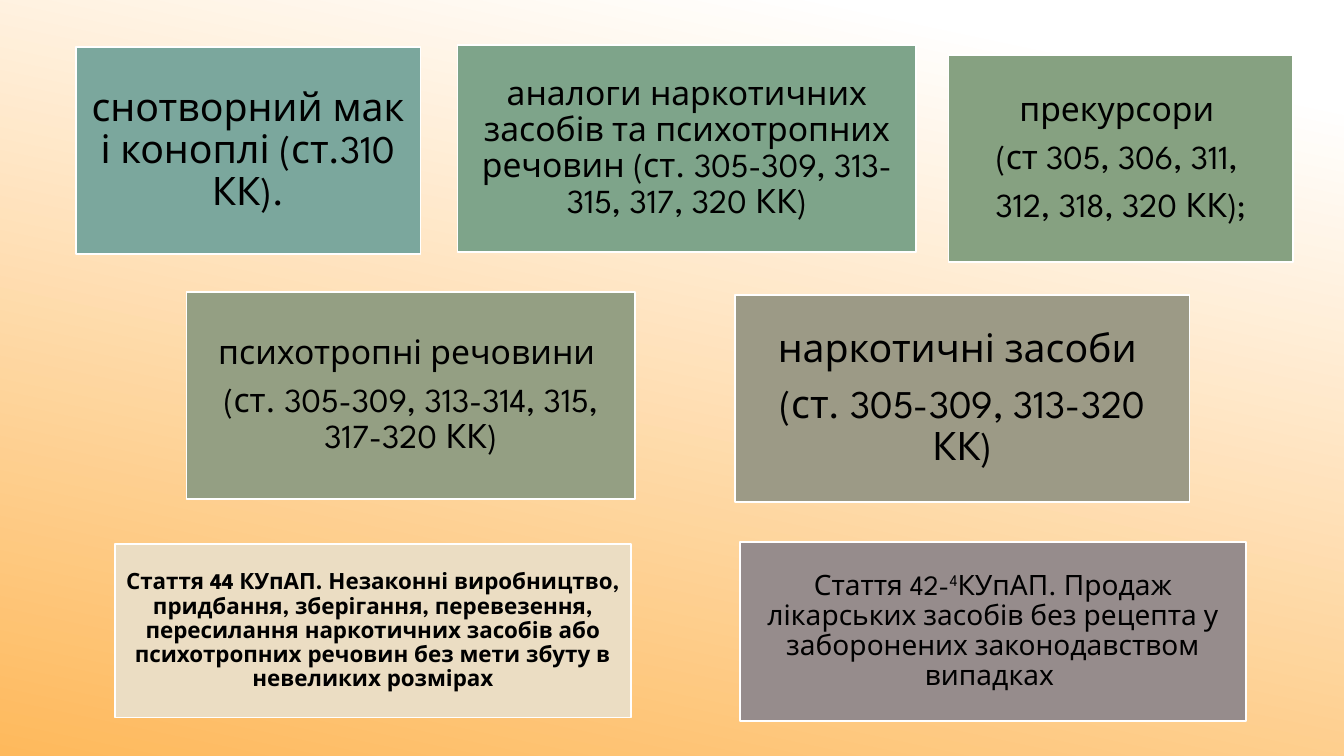
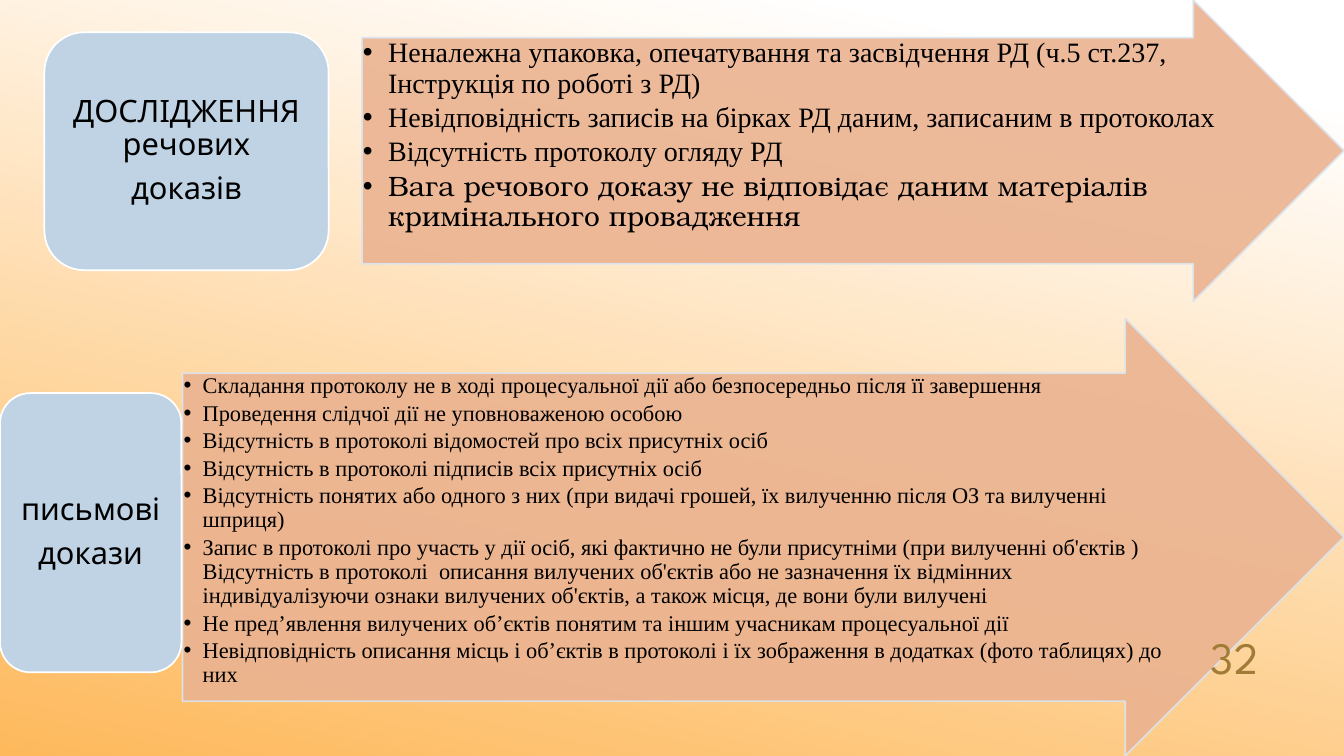
"""Builds two slides on drug offences and flaws in evidence."""
from lxml import etree
from pptx import Presentation
from pptx import util as u
from pptx.dml.color import RGBColor
from pptx.enum import shapes, text
from pptx.oxml import ns

WIDTH, HEIGHT = u.Inches(13.333), u.Inches(7.5)
COLUMN, ROW = WIDTH / 100, HEIGHT / 100

COLORS = {
    "white": "FFFFFF", "ink": "000000", "glow": "FEB95C",
    "teal": "7BA79D", "green": "7EA48A", "leaf": "86A181", "olive": "949F83",
    "khaki": "9C9A86", "sand": "EBDDC3", "mauve": "968C8C",
    "peach": "EBB391", "mist": "DCE5EE", "sky": "BFD3E4", "number": "A17C36",
}
MAIN_FONT, LIST_FONT, ACCENT_FONT = "League Spartan", "Times New Roman", "TeX Gyre Bonum"

CARDS = [
    ("teal", (5.63, 6.27, 25.65, 27.33), 28, ["снотворний мак і коноплі (ст.310 КК)."]),
    ("green", (34.05, 6, 34.13, 27.33), 24,
     ["аналоги наркотичних засобів та психотропних речовин (ст. 305-309, 313-315, 317, 320 КК)"]),
    ("leaf", (70.58, 7.33, 25.65, 27.33), 24,
     ["прекурсори ", "(ст 305, 306, 311, ", "312, 318, 320 КК);"]),
    ("olive", (13.88, 38.67, 33.38, 27.33), 24,
     ["психотропні речовини ", "(ст. 305-309, 313-314, 315, 317-320 КК)"]),
    ("khaki", (54.68, 39.07, 33.83, 27.33), 28,
     ["наркотичні засоби ", "(ст. 305-309, 313-320 КК)"]),
    ("sand", (8.55, 72, 38.4, 22.93), 16,
     ["Стаття 44 КУпАП. Незаконні виробництво, придбання, зберігання, перевезення, "
      "пересилання наркотичних засобів або психотропних речовин без мети збуту в "
      "невеликих розмірах"]),
    ("mauve", (55.05, 71.73, 37.65, 23.6), 20,
     ["Стаття 42-^4^КУпАП. Продаж лікарських засобів без рецепта у заборонених "
      "законодавством випадках "]),
]

MATERIAL_FLAWS = [
    "Неналежна упаковка, опечатування та засвідчення РД (ч.5 ст.237, Інструкція по роботі з РД)",
    "Невідповідність записів на бірках РД даним, записаним в протоколах",
    "Відсутність протоколу огляду РД",
    "Вага речового доказу не відповідає даним матеріалів кримінального провадження",
]
WRITTEN_FLAWS = [
    "Складання протоколу не в ході процесуальної дії або безпосередньо після її завершення",
    "Проведення слідчої дії не уповноваженою особою",
    "Відсутність в протоколі відомостей про всіх присутніх осіб",
    "Відсутність в протоколі підписів всіх присутніх осіб",
    "Відсутність понятих або одного з них (при видачі грошей, їх вилученню після ОЗ та "
    "вилученні шприця)",
    "Запис в протоколі про участь у дії осіб, які фактично не були присутніми (при вилученні "
    "об'єктів ) Відсутність в протоколі  описання вилучених об'єктів або не зазначення їх "
    "відмінних індивідуалізуючи ознаки вилучених об'єктів, а також місця, де вони були вилучені",
    "Не пред’явлення вилучених об’єктів понятим та іншим учасникам процесуальної дії",
    "Невідповідність описання місць і об’єктів в протоколі і їх зображення в додатках "
    "(фото таблицях) до них",
]


def color(name):
    return RGBColor.from_string(COLORS[name])


def place(left, top, width, height):
    return [u.Emu(round(share * unit)) for share, unit in
            zip((left, top, width, height), (COLUMN, ROW, COLUMN, ROW))]


def paint_background(master):
    fill = master.background.fill
    fill.gradient()
    fill.gradient_angle = 360 - 102
    for stop, position, name in zip(fill.gradient_stops, (0.1, 1), ("white", "glow")):
        stop.position = position
        stop.color.rgb = color(name)


def add_panel(slide, kind, area, fill, line="white"):
    panel = slide.shapes.add_shape(kind, *place(*area))
    panel.shadow.inherit = False
    panel.fill.solid()
    panel.fill.fore_color.rgb = color(fill)
    panel.line.color.rgb = color(line)
    panel.line.width = u.Pt(1.25)
    return panel


def set_frame(frame, anchor, side, upright):
    frame.word_wrap = True
    frame.vertical_anchor = anchor
    frame.margin_left = frame.margin_right = side
    frame.margin_top = frame.margin_bottom = upright


def set_font(paragraph, size, face=MAIN_FONT, name="ink", bold=False):
    font = paragraph.font
    font.size, font.name, font.bold = u.Pt(size), face, bold
    font.color.rgb = color(name)


def add_bullet(paragraph, indent):
    properties = paragraph._p.get_or_add_pPr()
    properties.set("marL", str(indent))
    properties.set("indent", str(-indent))
    etree.SubElement(properties, ns.qn("a:buFont"), typeface="Arial")
    etree.SubElement(properties, ns.qn("a:buChar"), char="•")


def write(frame, lines, size, align, after, face=MAIN_FONT, bold=False, indent=None):
    for index, line in enumerate(lines):
        paragraph = frame.add_paragraph() if index else frame.paragraphs[0]
        paragraph.alignment = align
        paragraph.line_spacing = 0.9
        paragraph.space_after = u.Pt(after * size)
        if indent:
            add_bullet(paragraph, indent)
        set_font(paragraph, size, face, bold=bold)
        for part, words in enumerate(line.split("^")):
            run = paragraph.add_run()
            run.text = words
            if part % 2:
                run._r.get_or_add_rPr().set("baseline", "30000")


def add_card(slide, fill, area, size, lines):
    card = add_panel(slide, shapes.MSO_SHAPE.RECTANGLE, area, fill)
    inset = u.Pt(0.3 * size)
    set_frame(card.text_frame, text.MSO_ANCHOR.MIDDLE, inset, inset)
    write(card.text_frame, lines, size, text.PP_ALIGN.CENTER, 0.35, bold=fill == "sand")


def add_label(slide, area, lines):
    label = add_panel(slide, shapes.MSO_SHAPE.ROUNDED_RECTANGLE, area, "sky")
    set_frame(label.text_frame, text.MSO_ANCHOR.MIDDLE, u.Inches(0.09), u.Inches(0.05))
    write(label.text_frame, lines, 22, text.PP_ALIGN.CENTER, 0.35)


def add_arrow_list(slide, area, lines, size, indent):
    arrow = add_panel(slide, shapes.MSO_SHAPE.RIGHT_ARROW, area, "peach", "mist")
    arrow.adjustments[0], arrow.adjustments[1] = 0.75, 0.5
    for tint in arrow._element.spPr.xpath(".//a:srgbClr"):
        etree.SubElement(tint, ns.qn("a:alpha"), val="90000")
    set_frame(arrow.text_frame, text.MSO_ANCHOR.TOP, u.Inches(0.01), u.Inches(0.01))
    write(arrow.text_frame, lines, size, text.PP_ALIGN.LEFT, 0.15, LIST_FONT,
          indent=u.Inches(indent))
    return arrow


def add_number(slide, number):
    frame = slide.shapes.add_textbox(*place(84.98, 81.33, 9.38, 9.73)).text_frame
    set_frame(frame, text.MSO_ANCHOR.BOTTOM, u.Inches(0.1), u.Inches(0.05))
    paragraph = frame.paragraphs[0]
    paragraph.alignment = text.PP_ALIGN.RIGHT
    set_font(paragraph, 32, name="number")
    paragraph.add_run().text = number


def main():
    deck = Presentation()
    deck.slide_width, deck.slide_height = WIDTH, HEIGHT
    paint_background(deck.slide_master)
    blank = deck.slide_layouts[6]

    offences = deck.slides.add_slide(blank)
    for card in CARDS:
        add_card(offences, *card)

    evidence = deck.slides.add_slide(blank)
    material = add_arrow_list(evidence, (26.93, 0, 73.07, 39.87), MATERIAL_FLAWS, 20, 0.25)
    material.text_frame.paragraphs[-1].font.name = ACCENT_FONT
    add_label(evidence, (3.3, 4.27, 21.15, 31.47), ["ДОСЛІДЖЕННЯ речових", "доказів"])
    add_arrow_list(evidence, (13.58, 42.13, 86.42, 57.87), WRITTEN_FLAWS, 16, 0.19)
    add_label(evidence, (0, 52, 13.5, 36.93), ["письмові", "докази"])
    add_number(evidence, "32")

    deck.save("out.pptx")


if __name__ == "__main__":
    main()
